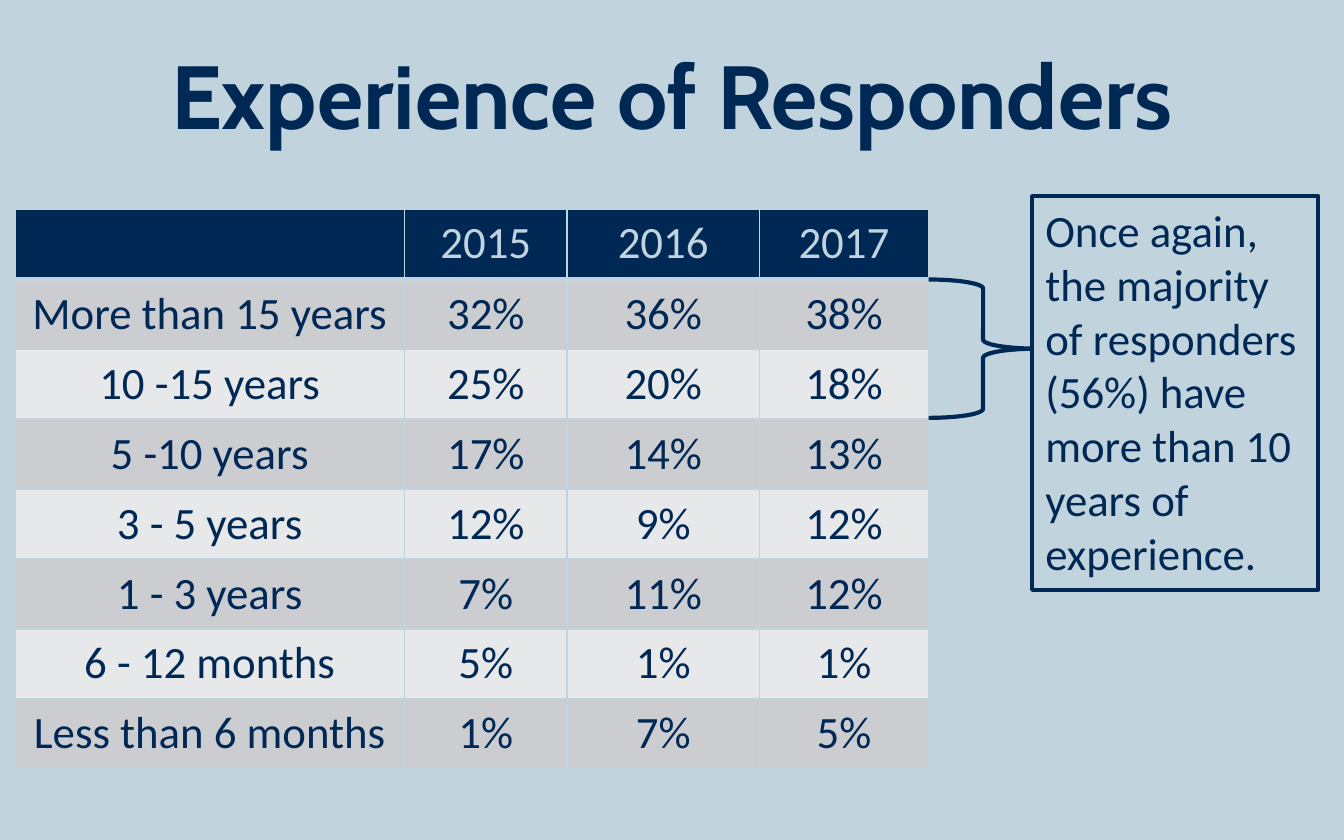
from dataclasses import dataclass

from lxml.etree import SubElement
from pptx import Presentation
from pptx.dml.color import RGBColor as Color
from pptx.enum.shapes import MSO_SHAPE as Shape
from pptx.enum.text import MSO_ANCHOR as Anchor, MSO_AUTO_SIZE as AutoSize, PP_ALIGN as Align
from pptx.oxml.ns import qn
from pptx.util import Inches, Pt

TITLE = "Experience of Responders"
YEARS = ["", "2015", "2016", "2017"]
EXPERIENCE = [
    ("More than 15 years", "32%", "36%", "38%"),
    ("10 -15 years", "25%", "20%", "18%"),
    ("5 -10 years", "17%", "14%", "13%"),
    ("3 - 5 years", "12%", "9%", "12%"),
    ("1 - 3 years", "7%", "11%", "12%"),
    ("6 - 12 months", "5%", "1%", "1%"),
    ("Less than 6 months", "1%", "7%", "5%"),
]
REMARK = ("Once again, the majority of responders (56%) have more than 10 "
          "years of experience.")
COLUMN_WIDTHS = [2.9, 1.21, 1.43, 1.26]
ROW_HEIGHT = 0.52


@dataclass(frozen=True)
class Theme:
    navy: str = "002855"
    sky: str = "C1D4DE"
    bands: tuple = ("CCCDD1", "E7E8E9")
    title_font: str = "Cabin"
    body_font: str = "Calibri"
    title_size: int = 48
    body_size: int = 24
    outline: float = 2.25


THEME = Theme()


def paint(fill, color):
    fill.solid()
    fill.fore_color.rgb = Color.from_string(color)


def style_text(frame, color, name=THEME.body_font, size=THEME.body_size,
               align=Align.CENTER, bold=False):
    for para in frame.paragraphs:
        para.alignment = align
        for span in para.runs:
            span.font.name = name
            span.font.size = Pt(size)
            span.font.bold = bold
            span.font.color.rgb = Color.from_string(color)


def set_borders(cell, bottom_width):
    properties = cell._tc.get_or_add_tcPr()
    widths = {"a:lnL": 1, "a:lnR": 1, "a:lnT": 1, "a:lnB": bottom_width}
    for side, width in widths.items():
        line = SubElement(properties, qn(side), w=str(Pt(width)))
        fill = SubElement(line, qn("a:solidFill"))
        SubElement(fill, qn("a:srgbClr"), val=THEME.sky)


def add_title(slide):
    title = slide.shapes.title
    title.left, title.top = Inches(0), Inches(0.25)
    title.width, title.height = Inches(10), Inches(0.79)
    frame = title.text_frame
    frame.text = TITLE
    frame.auto_size = AutoSize.NONE
    frame.vertical_anchor = Anchor.TOP
    style_text(frame, THEME.navy, THEME.title_font, THEME.title_size, bold=True)


def add_experience_table(slide):
    rows = [YEARS, *EXPERIENCE]
    table = slide.shapes.add_table(
        len(rows), len(YEARS), Inches(0.11), Inches(1.56),
        Inches(sum(COLUMN_WIDTHS)), Inches(ROW_HEIGHT * len(rows))).table
    for column, width in zip(table.columns, COLUMN_WIDTHS):
        column.width = Inches(width)
    for row_index, values in enumerate(rows):
        table.rows[row_index].height = Inches(ROW_HEIGHT)
        is_header = row_index == 0
        for column_index, value in enumerate(values):
            cell = table.cell(row_index, column_index)
            cell.text = value
            style_text(cell.text_frame, THEME.sky if is_header else THEME.navy)
            if not is_header:
                cell.vertical_anchor = Anchor.MIDDLE
                cell.margin_left = cell.margin_right = Inches(0.02)
                cell.margin_top = cell.margin_bottom = Inches(0.04)
            set_borders(cell, 3 if is_header else 1)
            paint(cell.fill, THEME.navy if is_header else THEME.bands[(row_index - 1) % 2])


def add_outlined(slide, kind, left, top, width, height):
    shape = slide.shapes.add_shape(
        kind, Inches(left), Inches(top), Inches(width), Inches(height))
    shape.shadow.inherit = False
    shape.line.color.rgb = Color.from_string(THEME.navy)
    shape.line.width = Pt(THEME.outline)
    return shape


def add_remark(slide):
    brace = add_outlined(slide, Shape.RIGHT_BRACE, 6.91, 2.08, 0.81, 1.03)
    brace.fill.background()
    box = add_outlined(slide, Shape.RECTANGLE, 7.68, 1.46, 2.13, 2.93)
    paint(box.fill, THEME.sky)
    frame = box.text_frame
    frame.text = REMARK
    frame.word_wrap = True
    frame.auto_size = AutoSize.SHAPE_TO_FIT_TEXT
    frame.vertical_anchor = Anchor.TOP
    style_text(frame, THEME.navy, align=Align.LEFT)


def main():
    deck = Presentation()
    deck.slide_width, deck.slide_height = Inches(10), Inches(6.25)
    slide = deck.slides.add_slide(deck.slide_layouts[5])
    paint(slide.background.fill, THEME.sky)
    add_experience_table(slide)
    add_title(slide)
    add_remark(slide)
    deck.save("out.pptx")


if __name__ == "__main__":
    main()
